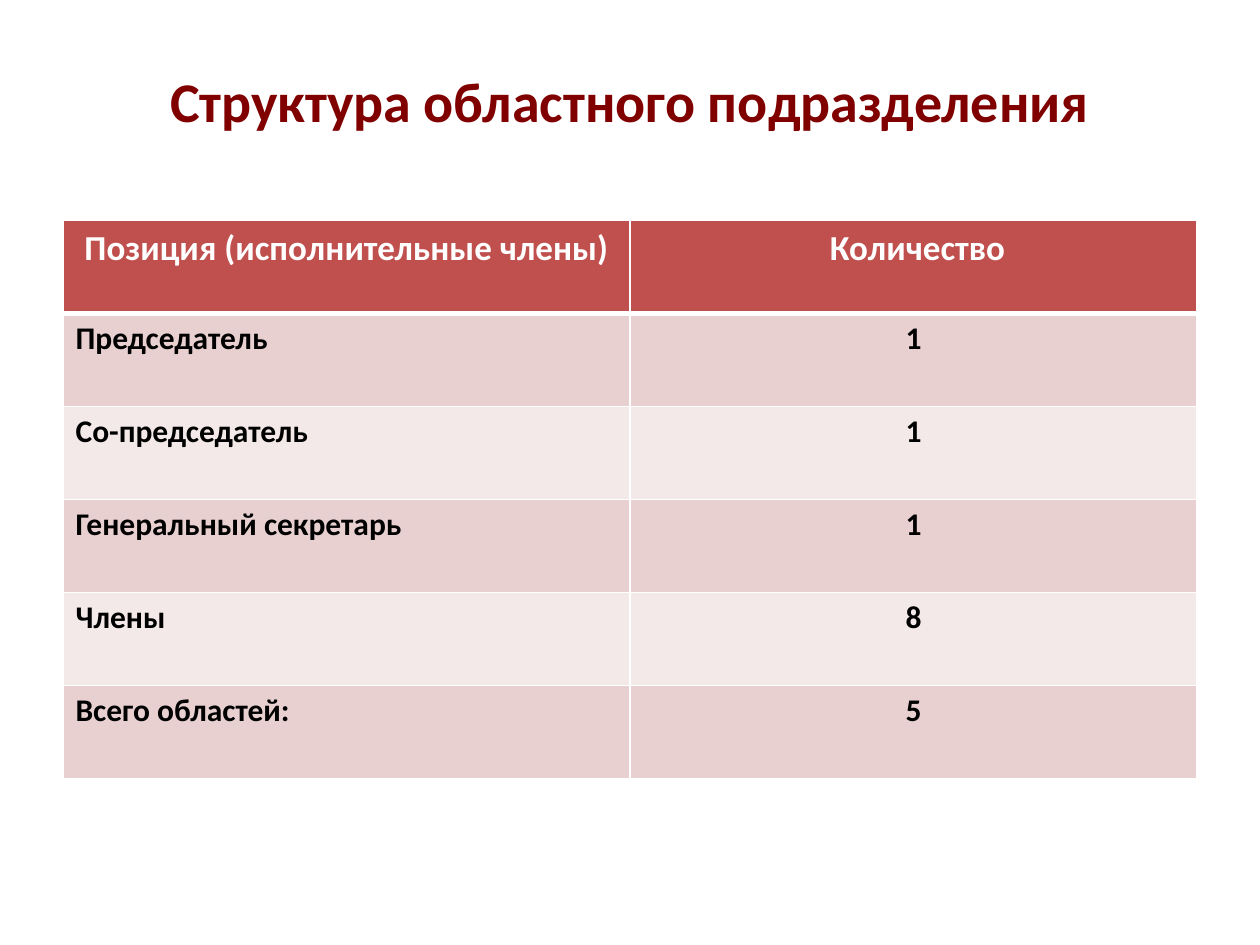
from lxml import etree
from pptx import Presentation
from pptx.dml.color import RGBColor
from pptx.enum import text
from pptx.oxml import ns
from pptx.util import Inches, Pt

MAROON = RGBColor(0x80, 0x00, 0x00)
RED = RGBColor(0xC0, 0x50, 0x4D)
DARK_BAND = RGBColor(0xE8, 0xD0, 0xD0)
LIGHT_BAND = RGBColor(0xF4, 0xE9, 0xE9)
WHITE = RGBColor(0xFF, 0xFF, 0xFF)
BLACK = RGBColor(0x00, 0x00, 0x00)


def format_paragraph(paragraph, size, color, alignment):
    paragraph.alignment = alignment
    for run in paragraph.runs:
        run.font.name = "Calibri"
        run.font.size = Pt(size)
        run.font.bold = True
        run.font.color.rgb = color


def add_border(cell, side, width):
    properties = cell._tc.get_or_add_tcPr()
    line = etree.SubElement(properties, ns.qn(f"a:{side}"), w=str(Pt(width)))
    fill = etree.SubElement(line, ns.qn("a:solidFill"))
    etree.SubElement(fill, ns.qn("a:srgbClr"), val=str(WHITE))


presentation = Presentation()
presentation.slide_width = Inches(10)
presentation.slide_height = Inches(7.5)
slide = presentation.slides.add_slide(presentation.slide_layouts[6])

title = slide.shapes.add_textbox(Inches(0.5), Inches(0.3), Inches(9), Inches(0.99))
title_frame = title.text_frame
title_frame.word_wrap = True
title_frame.vertical_anchor = text.MSO_ANCHOR.MIDDLE
title_frame.text = "Структура областного подразделения"
format_paragraph(title_frame.paragraphs[0], 32, MAROON, text.PP_ALIGN.CENTER)

positions = [
    ("Позиция (исполнительные члены)", " Количество"),
    ("Председатель", "1"),
    ("Co-председатель", "1"),
    ("Генеральный секретарь", "1"),
    ("Члены", "8"),
    ("Всего областей:", "5"),
]
table = slide.shapes.add_table(
    len(positions), 2, Inches(0.5), Inches(1.75), Inches(9), Inches(4.43)
).table

for row, values in enumerate(positions):
    is_header = row == 0
    band = RED if is_header else DARK_BAND if row % 2 else LIGHT_BAND
    for column, value in enumerate(values):
        cell = table.cell(row, column)
        add_border(cell, "lnL", 1)
        add_border(cell, "lnR", 1)
        add_border(cell, "lnT", 3 if row == 1 else 1)
        add_border(cell, "lnB", 3 if is_header else 1)
        cell.fill.solid()
        cell.fill.fore_color.rgb = band
        cell.text_frame.text = value
        centered = is_header or column == 1
        format_paragraph(
            cell.text_frame.paragraphs[0],
            20 if is_header else 18,
            WHITE if is_header else BLACK,
            text.PP_ALIGN.CENTER if centered else text.PP_ALIGN.LEFT,
        )

presentation.save("out.pptx")
